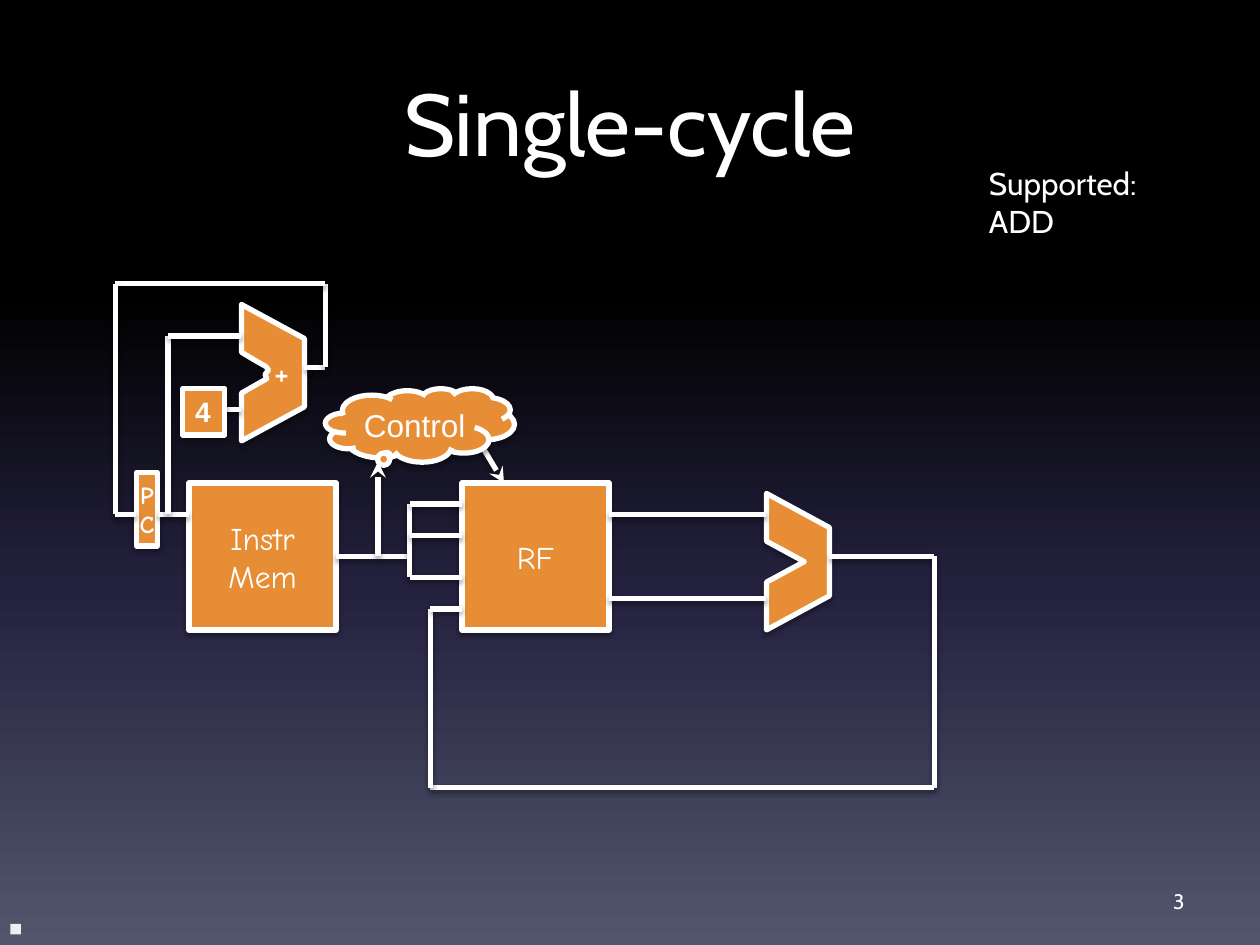
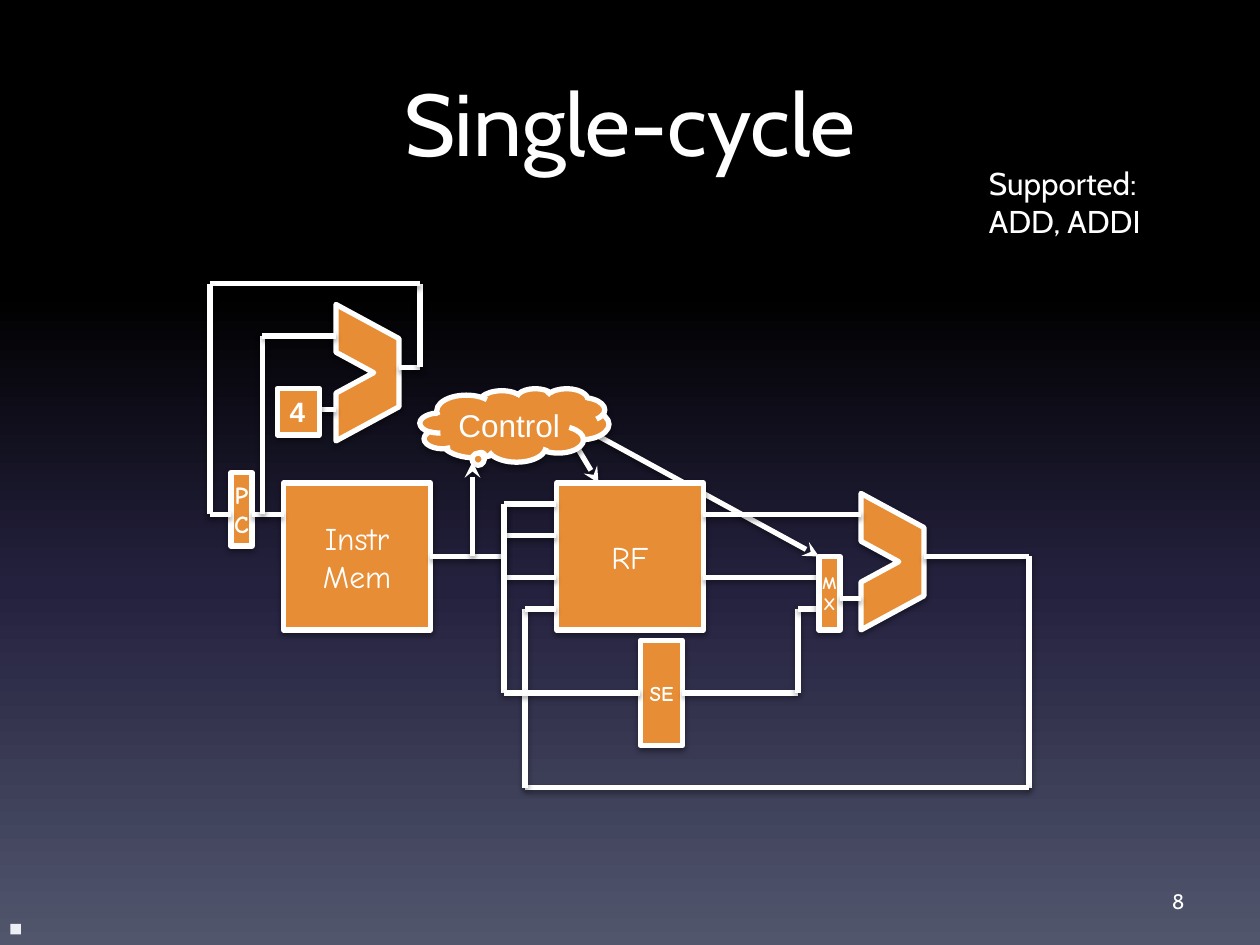
"""Builds two slides of a single-cycle processor datapath."""
from itertools import pairwise

from pptx import Presentation
from pptx.dml.color import RGBColor
from pptx.enum import shapes as kinds, text as t
from pptx.oxml import parse_xml
from pptx.oxml.ns import nsdecls, qn
from pptx.util import Pt

WHITE = RGBColor(0xFF, 0xFF, 0xFF)
ORANGE = RGBColor(0xE7, 0x8D, 0x35)
MARKER = RGBColor(0xEE, 0xEF, 0xF4)
SKY = [(0, RGBColor(0, 0, 0)), (31, RGBColor(0, 0, 0)),
       (62, RGBColor(0x24, 0x21, 0x3E)), (100, RGBColor(0x51, 0x56, 0x6D))]
BODY_FONT, BLOCK_FONT, PLAIN_FONT = "Cabin", "Comic Neue", "Arial"
RECT = kinds.MSO_SHAPE.RECTANGLE
LEFT, CENTER, RIGHT = t.PP_ALIGN.LEFT, t.PP_ALIGN.CENTER, t.PP_ALIGN.RIGHT
TOP, MIDDLE = t.MSO_ANCHOR.TOP, t.MSO_ANCHOR.MIDDLE
SIDE_LEFT, SIDE_RIGHT = 1, 3
NOTCH = [(0, 27.3), (21.6, 39), (0, 50.7)]
PLUS_NOTCH = [(0, 27.3), (7, 31.5), (14, 35.5), (15.5, 37.5),
              (13.5, 40), (14.4, 42.5), (0, 50.7)]


def paint_background(master):
    """Give the master the vertical night gradient."""
    fill = master.background.fill
    fill.gradient()
    fill.gradient_angle = 270
    stops = master.element.find(".//" + qn("a:gsLst"))
    for stop in list(stops):
        stops.remove(stop)
    for percent, color in SKY:
        stops.append(parse_xml(
            f'<a:gs {nsdecls("a")} pos="{percent * 1000}">'
            f'<a:srgbClr val="{color}"/></a:gs>'))


def outline(part):
    """Draw the white outline and soft shadow shared by blocks and wires."""
    part.line.color.rgb = WHITE
    part.line.width = Pt(3)
    part._element.spPr.append(parse_xml(
        f'<a:effectLst {nsdecls("a")}><a:outerShdw blurRad="{Pt(3.1)}" '
        f'dist="{Pt(1.6)}" dir="5400000" rotWithShape="0">'
        '<a:srgbClr val="000000"><a:alpha val="38000"/></a:srgbClr>'
        '</a:outerShdw></a:effectLst>'))


def write(part, words, size, font=BODY_FONT, bold=False, align=LEFT,
          anchor=TOP, wrap=False):
    """Fill a text frame with white text, one paragraph per line."""
    frame = part.text_frame
    frame.text = words
    frame.word_wrap = wrap
    frame.auto_size = t.MSO_AUTO_SIZE.NONE
    frame.vertical_anchor = anchor
    for paragraph in frame.paragraphs:
        paragraph.alignment = align
        paragraph.font.name = font
        paragraph.font.size = Pt(size)
        paragraph.font.bold = bold
        paragraph.font.color.rgb = WHITE


class Datapath:
    """Places blocks and wires relative to the diagram's top left corner."""

    def __init__(self, slide, left, top):
        self.shapes, self.left, self.top = slide.shapes, left, top

    def at(self, x, y):
        """Turn a place in the diagram into a place on the slide."""
        return Pt(self.left + x), Pt(self.top + y)

    def block(self, x, y, width, height, words, size, preset=RECT,
              font=BLOCK_FONT, bold=False, align=CENTER, anchor=MIDDLE):
        """Add a labelled orange block."""
        block = self.shapes.add_shape(preset, *self.at(x, y), Pt(width), Pt(height))
        block.fill.solid()
        block.fill.fore_color.rgb = ORANGE
        outline(block)
        write(block, words, size, font, bold, align, anchor)
        return block

    def alu(self, x, y, notch=NOTCH):
        """Add a notched arithmetic unit, 36 wide and 78 high."""
        corners = [(0, 78), (36, 58.5), (36, 19.5), (0, 0), *notch]
        points = [self.at(x + dx, y + dy) for dx, dy in corners]
        builder = self.shapes.build_freeform(*points[0])
        builder.add_line_segments(points[1:], close=True)
        unit = builder.convert_to_shape()
        unit.fill.solid()
        unit.fill.fore_color.rgb = ORANGE
        outline(unit)
        return unit

    def wire(self, *points, arrow=False):
        """Add a straight segment between each pair of neighbouring points."""
        segments = []
        for start, end in pairwise(points):
            segment = self.shapes.add_connector(
                kinds.MSO_CONNECTOR.STRAIGHT, *self.at(*start), *self.at(*end))
            outline(segment)
            if arrow:
                segment._element.spPr.find(qn("a:ln")).append(
                    parse_xml(f'<a:tailEnd {nsdecls("a")} type="stealth"/>'))
            segments.append(segment)
        return segments


def draw_fetch(path, plus):
    """Draw the program counter, its incrementer and the instruction memory."""
    memory = path.block(42, 114, 84, 84, "Instr\nMem", 18)
    path.block(12, 108, 12, 42, "P\nC", 14, bold=True)
    adder = path.alu(72, 12, PLUS_NOTCH if plus else NOTCH)
    if plus:
        write(adder, "+", 18, align=CENTER, anchor=MIDDLE)
        adder.text_frame.margin_left = Pt(10)
        adder.text_frame.margin_right = 0
    path.wire((24, 132), (42, 132))
    path.wire((30, 132), (30, 30), (72, 30))
    path.wire((54, 72), (72, 72))
    path.wire((108, 48), (120, 48), (120, 0), (0, 0), (0, 132), (12, 132))
    path.block(38.4, 60, 24, 26.6, "4", 16, font=PLAIN_FONT, bold=True,
               align=LEFT, anchor=TOP)
    return memory


def draw_execute(path, memory):
    """Draw the register file, the arithmetic unit and the write-back loop."""
    path.block(198, 114, 84, 84, "RF", 18)
    path.alu(372, 120)
    fetched, = path.wire((126, 156), (168, 156))
    fetched.begin_connect(memory, SIDE_RIGHT)
    path.wire((168, 126), (168, 168))
    for y in (126, 144, 168):
        path.wire((168, y), (198, y))
    path.wire((282, 132), (372, 132))
    path.wire((408, 156), (468, 156), (468, 288), (180, 288), (180, 186), (198, 186))


def draw_control(path):
    """Draw the control cloud and the instruction wire that feeds it."""
    cloud = path.block(120, 60, 108, 42, "Control", 18, font=PLAIN_FONT,
                       preset=kinds.MSO_SHAPE.CLOUD_CALLOUT, align=LEFT, anchor=TOP)
    cloud.adjustments[0], cloud.adjustments[1] = -0.177, 0.426
    path.wire((150, 156), (150, 102), arrow=True)


def draw_immediate(path):
    """Draw the sign extender and the operand multiplexer."""
    extender = path.block(246, 204, 24, 60, "SE", 12, bold=True)
    path.wire((282, 168), (348, 168))
    immediate = path.wire((168, 126), (168, 234), (246, 234))
    immediate[-1].end_connect(extender, SIDE_LEFT)
    extended = path.wire((270, 234), (336, 234), (336, 186), (348, 186))
    extended[0].begin_connect(extender, SIDE_RIGHT)
    path.block(348, 156, 12, 42, "M\nX", 10, bold=True)
    path.wire((360, 180), (372, 180))


def draw_frame(slide, number, supported):
    """Format the title and add the supported list, page number and marker."""
    title = slide.shapes.title
    title.left, title.top, title.width, title.height = Pt(36), Pt(36), Pt(648), Pt(90)
    write(title, "Single-cycle", 50, align=CENTER, wrap=True)
    page = slide.shapes.add_textbox(Pt(516), Pt(500.5), Pt(168), Pt(28.8))
    write(page, str(number), 12, align=RIGHT, anchor=MIDDLE, wrap=True)
    support = slide.shapes.add_textbox(Pt(558), Pt(90), Pt(104), Pt(51))
    write(support, f"Supported:\n{supported}", 18)
    marker = slide.shapes.add_shape(RECT, Pt(6), Pt(528), Pt(6), Pt(6))
    marker.shadow.inherit = False
    marker.fill.solid()
    marker.fill.fore_color.rgb = MARKER
    marker.line.fill.background()


def add_datapath_slide(prs, number, supported, left, immediate):
    """Add a datapath slide, with the immediate operand path if asked."""
    slide = prs.slides.add_slide(prs.slide_layouts[5])
    path = Datapath(slide, left, 162)
    if immediate:
        path.wire((216, 84), (348, 156), arrow=True)
    path.wire((204, 84), (222, 114), arrow=True)
    draw_frame(slide, number, supported)
    memory = draw_fetch(path, plus=not immediate)
    draw_execute(path, memory)
    draw_control(path)
    if immediate:
        draw_immediate(path)
    else:
        path.wire((282, 180), (372, 180))


def main():
    """Build and save the presentation."""
    prs = Presentation()
    prs.slide_width, prs.slide_height = Pt(720), Pt(540)
    paint_background(prs.slide_master)
    add_datapath_slide(prs, 3, "ADD", 66, immediate=False)
    add_datapath_slide(prs, 8, "ADD, ADDI", 120, immediate=True)
    prs.save("out.pptx")


if __name__ == "__main__":
    main()
